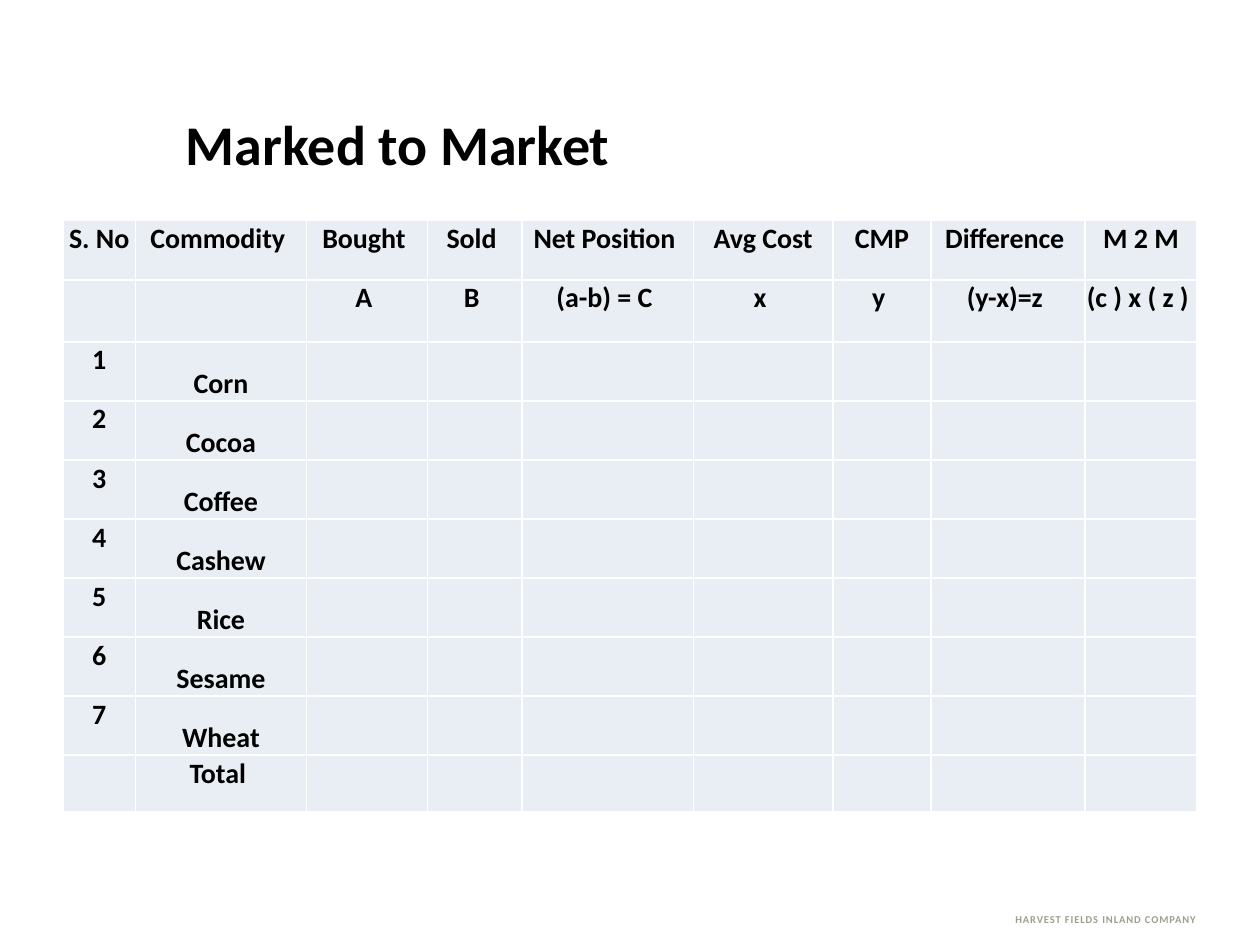
from lxml import etree
from pptx import Presentation
from pptx.dml.color import RGBColor
from pptx.enum.text import MSO_ANCHOR as Anchor, PP_ALIGN as Align
from pptx.oxml.ns import qn
from pptx.util import Cm, Pt

COLORS = {"ink": "000000", "footer": "9D9F8E", "cell": "E9EDF4", "border": "FFFFFF"}


def write(frame, text, size, color="ink", align=Align.LEFT, spacing=None):
    para = frame.paragraphs[0]
    para.alignment = align
    span = para.add_run()
    span.text = text
    span.font.name = "Calibri"
    span.font.size = Pt(size)
    span.font.bold = True
    span.font.color.rgb = RGBColor.from_string(COLORS[color])
    if spacing:
        span.font._element.set("spc", str(spacing))


deck = Presentation()
deck.slide_width = Cm(25.4)
deck.slide_height = Cm(19.05)
page = deck.slides.add_slide(deck.slide_layouts[6])

footer = page.shapes.add_textbox(Cm(20.22), Cm(18.29), Cm(4.57), Cm(0.51))
footer.text_frame.word_wrap = False
write(footer.text_frame, "HARVEST FIELDS INLAND COMPANY", 6, color="footer", spacing=50)

title = page.shapes.add_textbox(Cm(3.5), Cm(2.08), Cm(20.83), Cm(1.55))
title.text_frame.word_wrap = True
write(title.text_frame, "Marked to Market", 32)

commodities = ["Corn", "Cocoa", "Coffee", "Cashew", "Rice", "Sesame", "Wheat"]
rows = [
    ["S. No", "Commodity ", "Bought ", "Sold ", "Net Position ", "Avg Cost", "CMP", "Difference ", "M 2 M"],
    ["", "", "A ", "B ", "(a-b) = C ", "x ", "y ", "(y-x)=z ", "(c ) x ( z ) "],
]
rows += [[str(number), name] + [""] * 7 for number, name in enumerate(commodities, 1)]
rows.append(["", "Total "] + [""] * 7)
widths = [1.46, 3.45, 2.44, 1.9, 3.46, 2.81, 1.98, 3.1, 2.26]
heights = [1.19, 1.25] + [1.19] * 7 + [1.14]

grid = page.shapes.add_table(
    len(rows), len(widths), Cm(1.27), Cm(4.45), Cm(sum(widths)), Cm(sum(heights))
).table
grid.first_row = False
grid.horz_banding = False
for column, width in zip(grid.columns, widths):
    column.width = Cm(width)

for row_index, (labels, height) in enumerate(zip(rows, heights)):
    grid.rows[row_index].height = Cm(height)
    for column_index, label in enumerate(labels):
        cell = grid.cell(row_index, column_index)
        properties = cell._tc.get_or_add_tcPr()
        for side in ("a:lnL", "a:lnR", "a:lnT", "a:lnB"):
            line = etree.SubElement(properties, qn(side), w=str(Pt(1)))
            fill = etree.SubElement(line, qn("a:solidFill"))
            etree.SubElement(fill, qn("a:srgbClr"), val=COLORS["border"])
        cell.fill.solid()
        cell.fill.fore_color.rgb = RGBColor.from_string(COLORS["cell"])
        if label:
            cell.margin_left = cell.margin_right = cell.margin_top = Cm(0.03)
            cell.margin_bottom = Cm(0)
            if label in commodities:
                cell.vertical_anchor = Anchor.BOTTOM
            write(cell.text_frame, label, 16, align=Align.CENTER)

deck.save("out.pptx")
